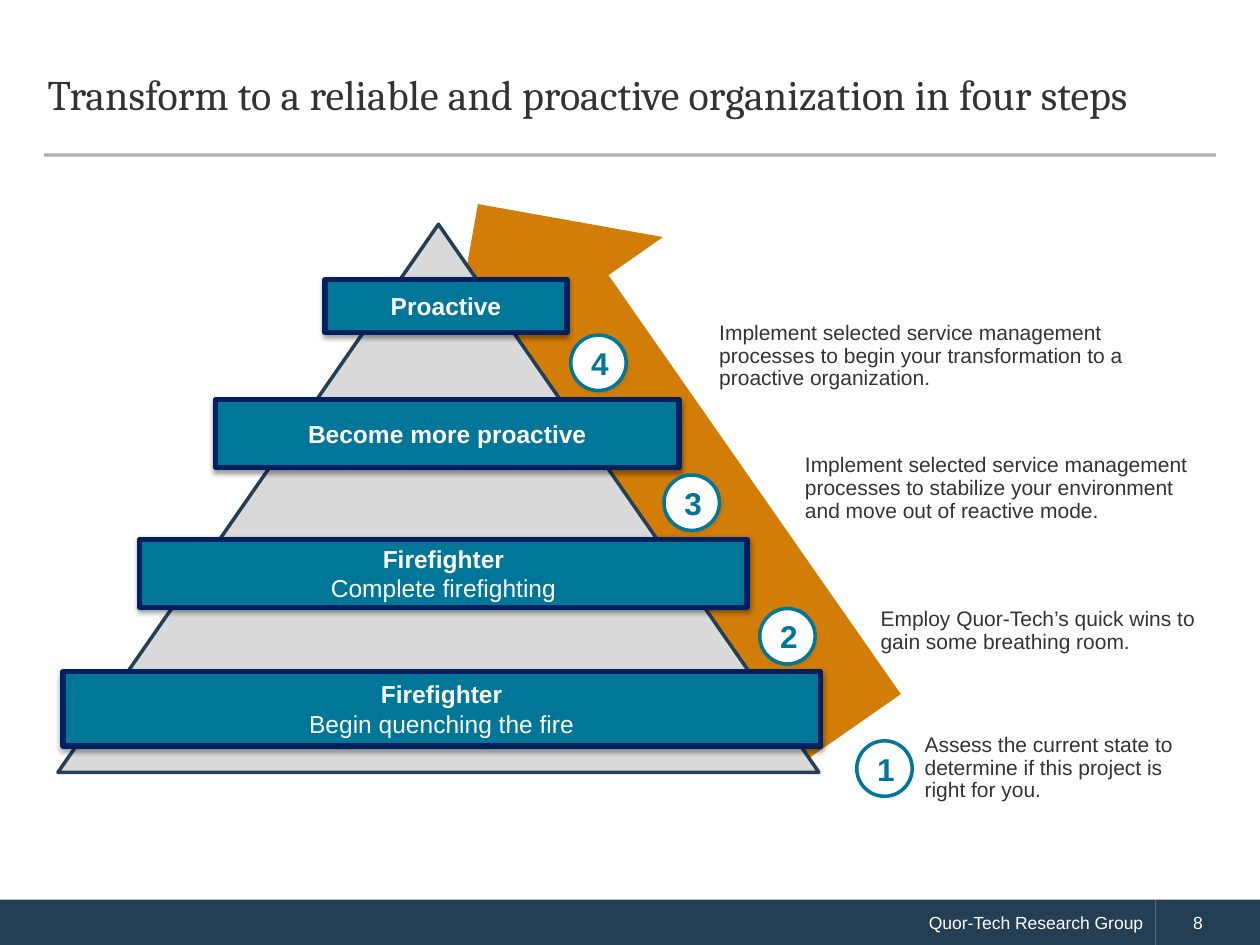
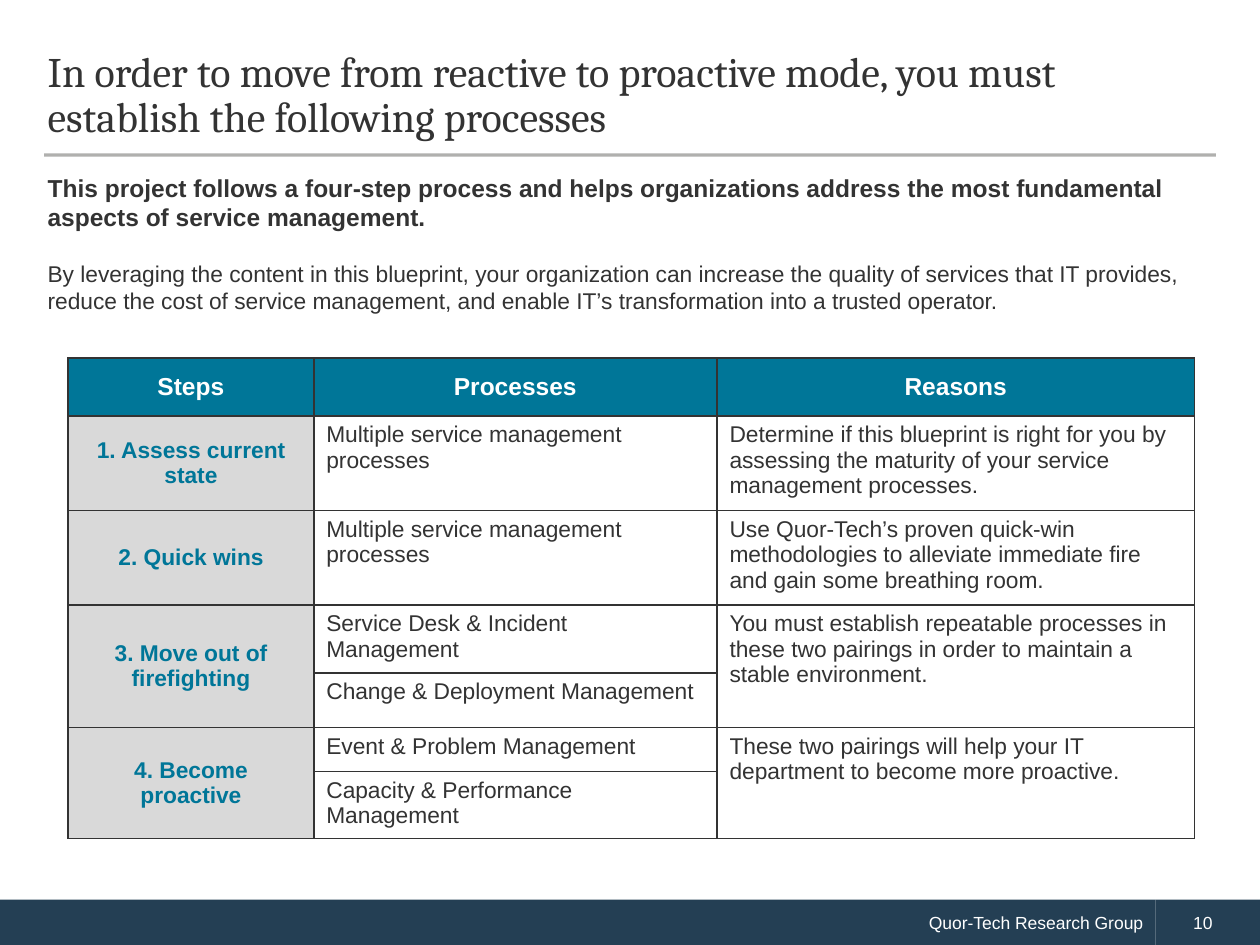
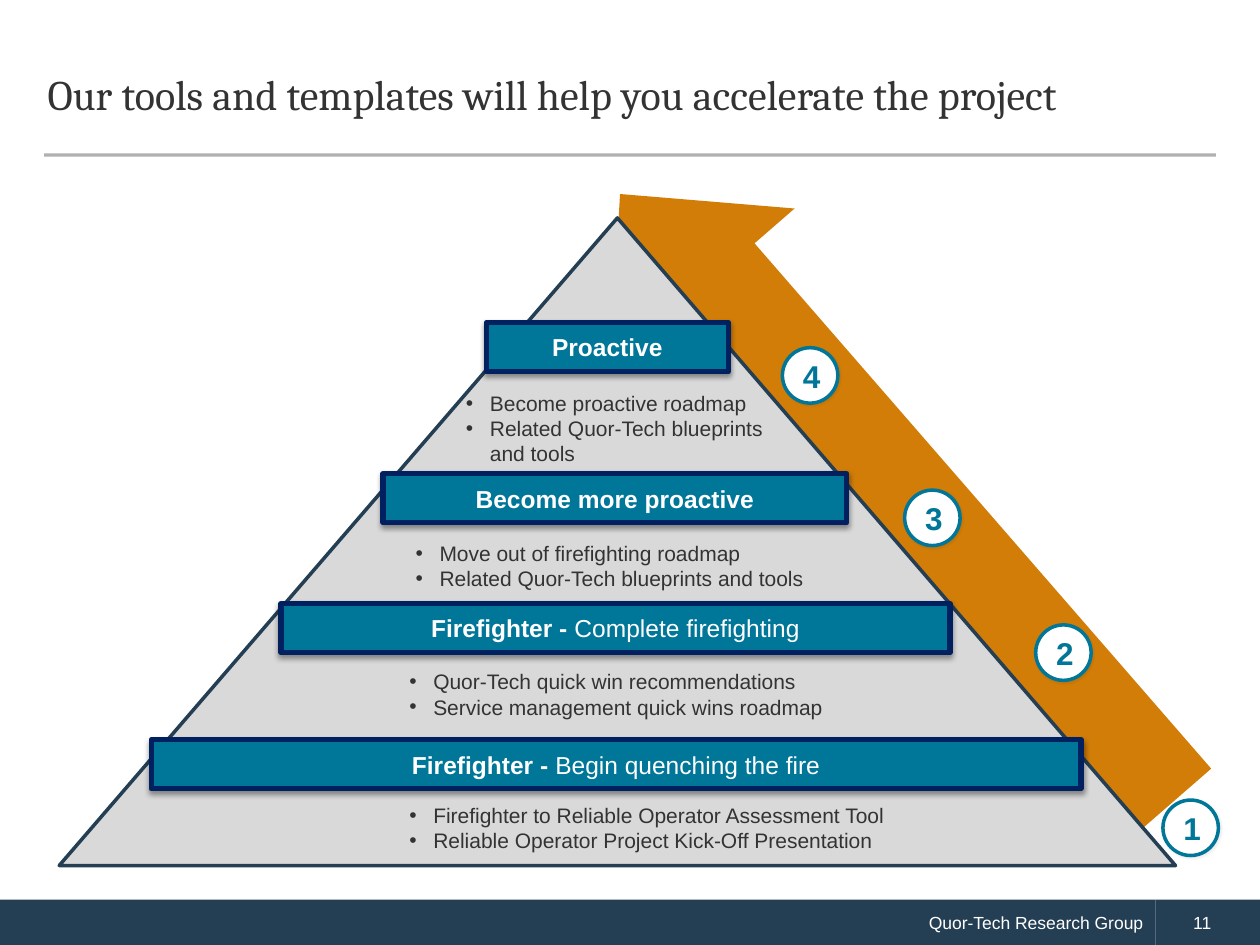
from lxml import etree
from pptx import Presentation
from pptx.dml.color import RGBColor
from pptx.enum.shapes import MSO_CONNECTOR, MSO_SHAPE
from pptx.enum.text import MSO_ANCHOR, PP_ALIGN
from pptx.oxml.ns import qn
from pptx.util import Emu, Inches, Pt

LEFT, CENTER, RIGHT = PP_ALIGN.LEFT, PP_ALIGN.CENTER, PP_ALIGN.RIGHT
TOP, MIDDLE = MSO_ANCHOR.TOP, MSO_ANCHOR.MIDDLE
RECTANGLE, ELLIPSE = MSO_SHAPE.RECTANGLE, MSO_SHAPE.OVAL
TRIANGLE, ARROW = MSO_SHAPE.ISOSCELES_TRIANGLE, MSO_SHAPE.RIGHT_ARROW
STRAIGHT = MSO_CONNECTOR.STRAIGHT

NAVY, BAR_EDGE, TEAL, ORANGE = "243F54", "002060", "007698", "D17D08"
GREY, INK, WHITE, RULE, BLACK = "D9D9D9", "333333", "FFFFFF", "45433E", "000000"
BAR_SHADOW = {"opacity": 38, "blur": 3.1, "distance": 1.6, "angle": 90}
BADGE_SHADOW = {"opacity": 5, "blur": 1, "distance": 1, "angle": 45}
BADGE_SIZE = 0.44
PLAIN = {"bold": False}


def color(hex_code):
    return RGBColor.from_string(hex_code)


def add_node(parent, tag, **attributes):
    node = etree.SubElement(parent, qn(tag))
    for key, value in attributes.items():
        node.set(key, str(value))
    return node


def write(frame, paragraphs, size=12, ink=INK, font="Arial", bold=False,
          align=LEFT, anchor=TOP, spacing=None, after=None, bullet=False):
    frame.word_wrap = True
    frame.vertical_anchor = anchor
    for index, runs in enumerate(paragraphs):
        paragraph = frame.add_paragraph() if index else frame.paragraphs[0]
        paragraph.alignment = align
        if spacing is not None:
            paragraph.line_spacing = spacing
        if after is not None:
            paragraph.space_after = Pt(after)
        if bullet:
            properties = paragraph._p.get_or_add_pPr()
            properties.set("marL", str(Inches(0.19)))
            properties.set("indent", str(-Inches(0.19)))
            add_node(properties, "a:buFont", typeface="Arial")
            add_node(properties, "a:buChar", char="•")
        for words, changes in ([(runs, {})] if isinstance(runs, str) else runs):
            run = paragraph.add_run()
            run.text = words
            run.font.name = font
            run.font.size = Pt(changes.get("size", size))
            run.font.bold = changes.get("bold", bold)
            run.font.color.rgb = color(ink)


def add_text(slide, box, paragraphs, **style):
    text_box = slide.shapes.add_textbox(*map(Inches, box))
    write(text_box.text_frame, paragraphs, **style)


def add_figure(slide, kind, box, fill, edge=None, width=2, shadow=None):
    figure = slide.shapes.add_shape(kind, *map(Inches, box))
    figure.shadow.inherit = False
    figure.fill.solid()
    figure.fill.fore_color.rgb = color(fill)
    if edge:
        figure.line.color.rgb = color(edge)
        figure.line.width = Pt(width)
    else:
        figure.line.fill.background()
    if shadow:
        effects = figure._element.spPr.find(qn("a:effectLst"))
        outer = add_node(effects, "a:outerShdw", blurRad=Pt(shadow["blur"]),
                         dist=Pt(shadow["distance"]),
                         dir=shadow["angle"] * 60000, rotWithShape=0)
        tint = add_node(outer, "a:srgbClr", val=BLACK)
        add_node(tint, "a:alpha", val=shadow["opacity"] * 1000)
    return figure


def add_arrow(slide, box, rotation, adjustments=(0.5, 0.5)):
    arrow = add_figure(slide, ARROW, box, ORANGE)
    arrow.rotation = rotation
    for index, value in enumerate(adjustments):
        arrow.adjustments[index] = value


def add_pyramid(slide, box):
    add_figure(slide, TRIANGLE, box, GREY, NAVY)


def add_bar(slide, box, paragraphs):
    bar = add_figure(slide, RECTANGLE, box, TEAL, BAR_EDGE, 3, BAR_SHADOW)
    write(bar.text_frame, paragraphs, size=14, ink=WHITE, bold=True,
          align=CENTER, anchor=MIDDLE)


def add_badge(slide, number, left, top):
    badge = add_figure(slide, ELLIPSE, (left, top, BADGE_SIZE, BADGE_SIZE),
                       WHITE, TEAL, shadow=BADGE_SHADOW)
    write(badge.text_frame, [str(number)], size=18, ink=TEAL, bold=True,
          align=CENTER, anchor=MIDDLE)


def add_base(deck, title, page):
    slide = deck.slides.add_slide(deck.slide_layouts[6])
    footer = add_figure(slide, RECTANGLE, (0, 7.14, 9.17, 0.37), NAVY)
    write(footer.text_frame, ["Quor-Tech Research Group"], size=10, ink=WHITE,
          align=RIGHT, anchor=MIDDLE)
    page_band = add_figure(slide, RECTANGLE, (9.17, 7.14, 0.83, 0.37), NAVY)
    page_band.text_frame.margin_left = Inches(0.3)
    write(page_band.text_frame, [str(page)], size=10, ink=WHITE, anchor=MIDDLE)
    rule = slide.shapes.add_connector(
        STRAIGHT, *map(Inches, (0.35, 1.23, 9.65, 1.23)))
    rule.line.color.rgb = color(RULE)
    rule.line.width = Pt(1.75)
    tint = rule.line._ln.find(".//" + qn("a:srgbClr"))
    add_node(tint, "a:alpha", val=42000)
    add_node(rule._element.spPr, "a:effectLst")
    add_text(slide, (0.28, 0.29, 9.43, 0.94), [title], size=24, font="Cambria",
             anchor=MIDDLE, spacing=Pt(26))
    return slide


def fill_cell(cell, words, fill, **style):
    properties = cell._tc.get_or_add_tcPr()
    for side in ("a:lnL", "a:lnR", "a:lnT", "a:lnB"):
        border = add_node(properties, side, w=Pt(1))
        add_node(add_node(border, "a:solidFill"), "a:srgbClr", val=INK)
    cell.fill.solid()
    cell.fill.fore_color.rgb = color(fill)
    if words:
        write(cell.text_frame, [words], **style)
        cell.vertical_anchor = style.get("anchor", TOP)


def add_process_table(slide, rows, widths, heights, merged_rows):
    table = slide.shapes.add_table(
        len(rows), len(widths), Inches(0.54), Inches(2.84),
        Emu(sum(map(Inches, widths))), Emu(sum(map(Inches, heights)))).table
    for column, width in zip(table.columns, widths):
        column.width = Inches(width)
    for row, height in zip(table.rows, heights):
        row.height = Inches(height)
    heading = {"bold": True, "align": CENTER, "anchor": MIDDLE}
    for r, row in enumerate(rows):
        for c, words in enumerate(row):
            cell = table.cell(r, c)
            if r == 0:
                fill_cell(cell, words, TEAL, size=14, ink=WHITE, **heading)
            elif c == 0:
                fill_cell(cell, words, GREY, size=13, ink=TEAL, **heading)
            else:
                fill_cell(cell, words, WHITE, size=13)
    for r in merged_rows:
        for c in (0, 2):
            table.cell(r, c).merge(table.cell(r + 1, c))


def build_four_steps(deck):
    slide = add_base(
        deck, "Transform to a reliable and proactive organization in four steps", 8)
    add_arrow(slide, (2.7, 2.66, 5.11, 2.11), 235.1)
    add_pyramid(slide, (0.46, 1.78, 6.04, 4.35))
    for box, paragraphs in [
        ((0.5, 5.33, 6.01, 0.59),
         ["Firefighter", [("Begin quenching the fire", PLAIN)]]),
        ((1.11, 4.28, 4.82, 0.54),
         ["Firefighter", [("Complete firefighting", PLAIN)]]),
        ((1.71, 3.17, 3.68, 0.54), ["Become more proactive"]),
        ((2.58, 2.22, 1.92, 0.42), ["Proactive"]),
    ]:
        add_bar(slide, box, paragraphs)
    for number, badge_at, note_box, note in [
        (1, (6.8, 5.88), (7.24, 5.78, 2.3, 0.65),
         "Assess the current state to determine if this project is right for you."),
        (2, (6.03, 4.83), (6.89, 4.78, 2.82, 0.46),
         "Employ Quor-Tech’s quick wins to gain some breathing room."),
        (3, (5.27, 3.77), (6.29, 3.56, 3.41, 0.65),
         "Implement selected service management processes to stabilize your "
         "environment and move out of reactive mode."),
        (4, (4.53, 2.66), (5.61, 2.51, 3.88, 0.65),
         "Implement selected service management processes to begin your "
         "transformation to a proactive organization."),
    ]:
        add_badge(slide, number, *badge_at)
        add_text(slide, note_box, [note], spacing=0.9, after=1.8)


def build_processes(deck):
    slide = add_base(
        deck, "In order to move from reactive to proactive mode, you must "
        "establish the following processes", 10)
    add_text(slide, (0.28, 1.32, 9.43, 1.51), [
        [("This project follows a four-step process and helps organizations "
          "address the most fundamental aspects of service management.",
          {"size": 14, "bold": True})],
        "By leveraging the content in this blueprint, your organization can "
        "increase the quality of services that IT provides, reduce the cost of "
        "service management, and enable IT’s transformation into a trusted operator.",
    ], size=13, after=16)
    rows = [
        ("Steps", "Processes", "Reasons"),
        ("1. Assess current state", "Multiple service management processes",
         "Determine if this blueprint is right for you by assessing the maturity "
         "of your service management processes."),
        ("2. Quick wins", "Multiple service management processes",
         "Use Quor-Tech’s proven quick-win methodologies to alleviate immediate "
         "fire and gain some breathing room."),
        ("3. Move out of firefighting", "Service Desk & Incident Management",
         "You must establish repeatable processes in these two pairings in order "
         "to maintain a stable environment."),
        ("", "Change & Deployment Management", ""),
        ("4. Become proactive", "Event & Problem Management",
         "These two pairings will help your IT department to become more proactive."),
        ("", "Capacity & Performance Management", ""),
    ]
    add_process_table(slide, rows, (1.95, 3.2, 3.79),
                      (0.46, 0.75, 0.75, 0.54, 0.43, 0.35, 0.53), (3, 5))


def build_tools(deck):
    slide = add_base(
        deck, "Our tools and templates will help you accelerate the project", 11)
    add_arrow(slide, (3.8, 3.03, 6.52, 1.94), 229, (0.566, 0.513))
    add_pyramid(slide, (0.47, 1.73, 8.86, 5.14))
    for number, badge_at, (left, top, width), label, tools_box, tools in [
        (1, (9.23, 6.35), (1.2, 5.87, 7.38),
         [("Firefighter - ", {}), ("Begin quenching the fire", PLAIN)],
         (3.15, 6.32, 4.59, 0.5),
         ["Firefighter to Reliable Operator Assessment Tool",
          "Reliable Operator Project Kick-Off Presentation"]),
        (2, (8.22, 4.96), (2.23, 4.79, 5.31),
         [("Firefighter - ", {}), ("Complete firefighting", PLAIN)],
         (3.15, 5.26, 4.59, 0.5),
         ["Quor-Tech quick win recommendations",
          "Service management quick wins roadmap"]),
        (3, (7.18, 3.89), (3.04, 3.76, 3.68), "Become more proactive",
         (3.2, 4.24, 4.59, 0.5),
         ["Move out of firefighting roadmap",
          "Related Quor-Tech blueprints and tools"]),
        (4, (6.21, 2.76), (3.86, 2.56, 1.92), "Proactive",
         (3.6, 3.05, 2.66, 0.71),
         ["Become proactive roadmap",
          "Related Quor-Tech blueprints and tools"]),
    ]:
        add_bar(slide, (left, top, width, 0.39), [label])
        add_badge(slide, number, *badge_at)
        add_text(slide, tools_box, tools, bullet=True)


def main():
    deck = Presentation()
    deck.slide_width = Inches(10)
    deck.slide_height = Inches(7.5)
    build_four_steps(deck)
    build_processes(deck)
    build_tools(deck)
    deck.save("out.pptx")


if __name__ == "__main__":
    main()
